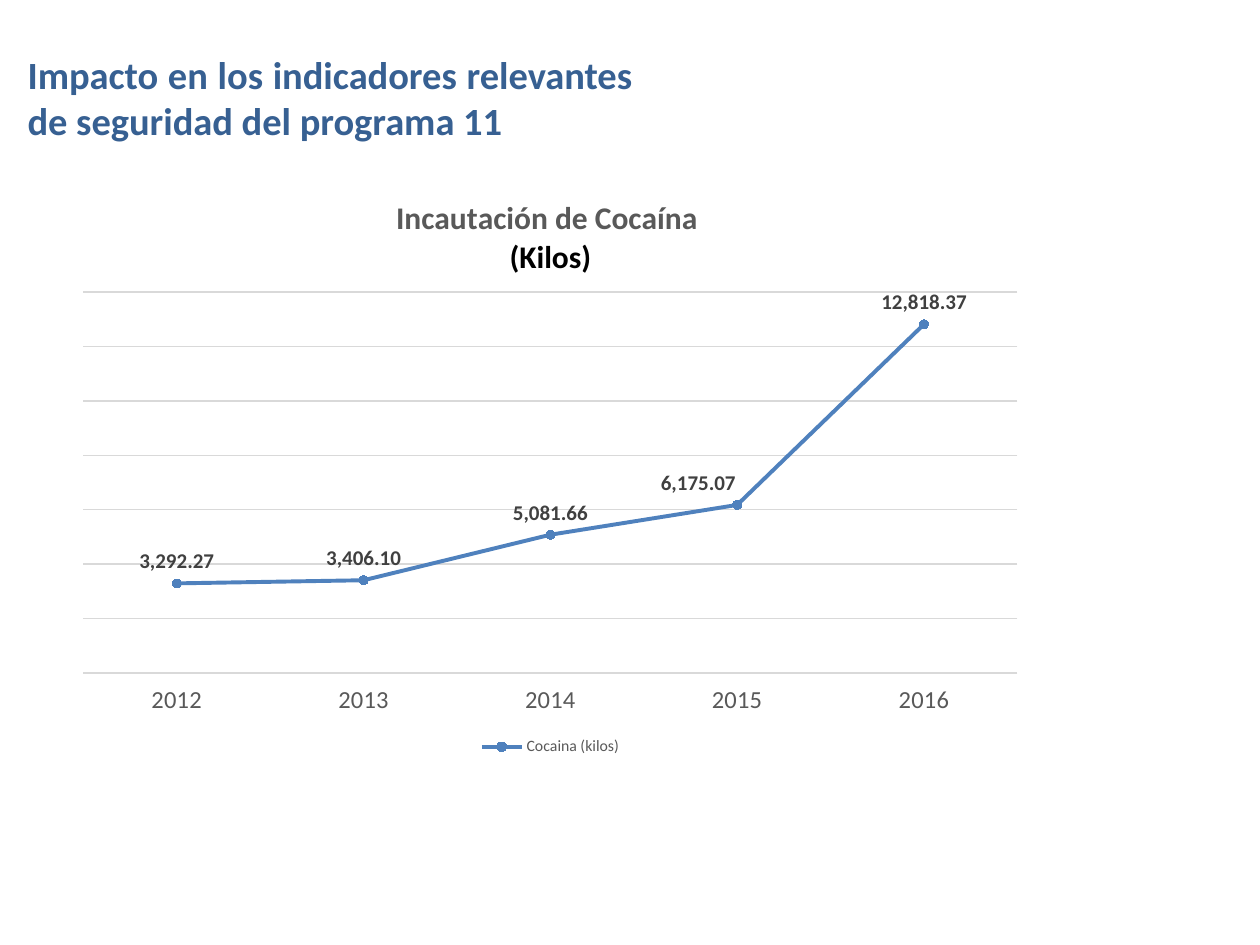
from lxml import etree
from pptx import Presentation
from pptx.chart.data import CategoryChartData
from pptx.dml.color import RGBColor
from pptx.enum.chart import (XL_CHART_TYPE, XL_LABEL_POSITION, XL_LEGEND_POSITION,
                             XL_MARKER_STYLE, XL_TICK_LABEL_POSITION, XL_TICK_MARK)
from pptx.enum.text import MSO_ANCHOR, MSO_AUTO_SIZE, PP_ALIGN
from pptx.oxml import parse_xml
from pptx.oxml.ns import nsdecls, qn
from pptx.util import Emu, Pt

PX = 914400 // 126
FONT = "Calibri"
TITLE_BLUE = RGBColor(0x37, 0x60, 0x92)
LINE_BLUE = RGBColor(0x4F, 0x81, 0xBD)
GRID_GRAY = RGBColor(0xD9, 0xD9, 0xD9)
TEXT_GRAY = RGBColor(0x59, 0x59, 0x59)
LABEL_GRAY = RGBColor(0x40, 0x40, 0x40)
BLACK = RGBColor(0, 0, 0)
ABOVE = XL_LABEL_POSITION.ABOVE
NO_TICK = XL_TICK_MARK.NONE

TITLE_BOX = (15, 45, 630, 106)
CHART_BOX = (64, 175, 973, 586)
PLOT_BOX = (20, 118, 933, 382)  # relative to the chart
YEARS = ["2012", "2013", "2014", "2015", "2016"]
KILOS = [3292.27, 3406.10, 5081.66, 6175.07, 12818.37]
NUMBER_FORMAT = "#,##0.00"


def to_emu(box):
    return [Emu(length * PX) for length in box]


def set_font(font, size, color, bold=False):
    font.name = FONT
    font.size = Pt(size)
    font.bold = bold
    font.color.rgb = color


def manual_layout(values):
    """Return a c:layout element holding the given name and value pairs."""
    layout = parse_xml(f"<c:layout {nsdecls('c')}/>")
    manual = etree.SubElement(layout, qn("c:manualLayout"))
    for name, value in values:
        etree.SubElement(manual, qn(f"c:{name}")).set("val", str(value))
    return layout


def place_plot(chart, plot_box, chart_box):
    area = chart.plots[0]._element.getparent()
    for old_layout in area.findall(qn("c:layout")):
        area.remove(old_layout)
    left, top, width, height = plot_box
    chart_width, chart_height = chart_box[2:]
    area.insert(0, manual_layout([
        ("layoutTarget", "inner"), ("xMode", "edge"), ("yMode", "edge"),
        ("x", round(left / chart_width, 2)), ("y", round(top / chart_height, 2)),
        ("w", round(width / chart_width, 2)), ("h", round(height / chart_height, 2)),
    ]))


def add_title(slide, box):
    title = slide.shapes.title
    title.left, title.top, title.width, title.height = to_emu(box)
    frame = title.text_frame
    frame.word_wrap = True
    frame.auto_size = MSO_AUTO_SIZE.SHAPE_TO_FIT_TEXT
    frame.vertical_anchor = MSO_ANCHOR.TOP
    frame.text = "Impacto en los indicadores relevantes de seguridad del programa 11"
    paragraph = frame.paragraphs[0]
    paragraph.alignment = PP_ALIGN.JUSTIFY
    set_font(paragraph.font, 22, TITLE_BLUE, True)


def format_chart_title(chart):
    frame = chart.chart_title.text_frame
    frame.text = "Incautación de Cocaína \n(Kilos)"
    for paragraph, color in zip(frame.paragraphs, (TEXT_GRAY, BLACK)):
        set_font(paragraph.font, 18, color, True)
    chart.chart_title.include_in_layout = False


def format_axes(chart):
    years = chart.category_axis
    years.major_tick_mark = years.minor_tick_mark = NO_TICK
    years.tick_label_position = XL_TICK_LABEL_POSITION.LOW
    years.has_major_gridlines = False
    set_font(years.tick_labels.font, 14, TEXT_GRAY)
    kilos = chart.value_axis
    kilos.minimum_scale, kilos.maximum_scale, kilos.major_unit = 0, 14000, 2000
    kilos.has_major_gridlines = True
    kilos.visible = False
    for line in (years.format.line, kilos.major_gridlines.format.line):
        line.color.rgb = GRID_GRAY
        line.width = Pt(0.75)


def format_series(series):
    series.smooth = False
    series.format.line.color.rgb = LINE_BLUE
    series.format.line.width = Pt(2.25)
    marker = series.marker
    marker.style = XL_MARKER_STYLE.CIRCLE
    marker.size = 5
    marker.format.fill.solid()
    marker.format.fill.fore_color.rgb = LINE_BLUE
    marker.format.line.color.rgb = LINE_BLUE

    labels = series.data_labels
    labels.show_value = True
    labels.position = ABOVE
    labels.number_format = NUMBER_FORMAT
    labels.number_format_is_linked = False
    set_font(labels.font, 12, LABEL_GRAY, True)

    # The 2015 label moves left, clear of the steep line.
    label = series.points[YEARS.index("2015")].data_label
    set_font(label.font, 12, LABEL_GRAY, True)
    label.position = ABOVE
    label_element = labels._element.find(qn("c:dLbl"))
    label_element.insert(1, manual_layout([("x", -0.04), ("y", 0)]))


def add_cocaine_chart(slide, box):
    data = CategoryChartData(number_format=NUMBER_FORMAT)
    data.categories = YEARS
    data.add_series("Cocaina (kilos)", KILOS)
    chart = slide.shapes.add_chart(
        XL_CHART_TYPE.LINE_MARKERS_STACKED, *to_emu(box), data).chart
    set_font(chart.font, 10, BLACK)
    format_chart_title(chart)
    format_axes(chart)
    chart.plots[0].vary_by_categories = False
    format_series(chart.plots[0].series[0])
    chart.has_legend = True
    chart.legend.position = XL_LEGEND_POSITION.BOTTOM
    chart.legend.include_in_layout = False
    set_font(chart.legend.font, 9, TEXT_GRAY)
    place_plot(chart, PLOT_BOX, box)


def main():
    presentation = Presentation()
    presentation.slide_width = Emu(1260 * PX)
    presentation.slide_height = Emu(945 * PX)
    slide = presentation.slides.add_slide(presentation.slide_layouts[5])
    add_cocaine_chart(slide, CHART_BOX)
    add_title(slide, TITLE_BOX)
    presentation.save("out.pptx")


if __name__ == "__main__":
    main()
